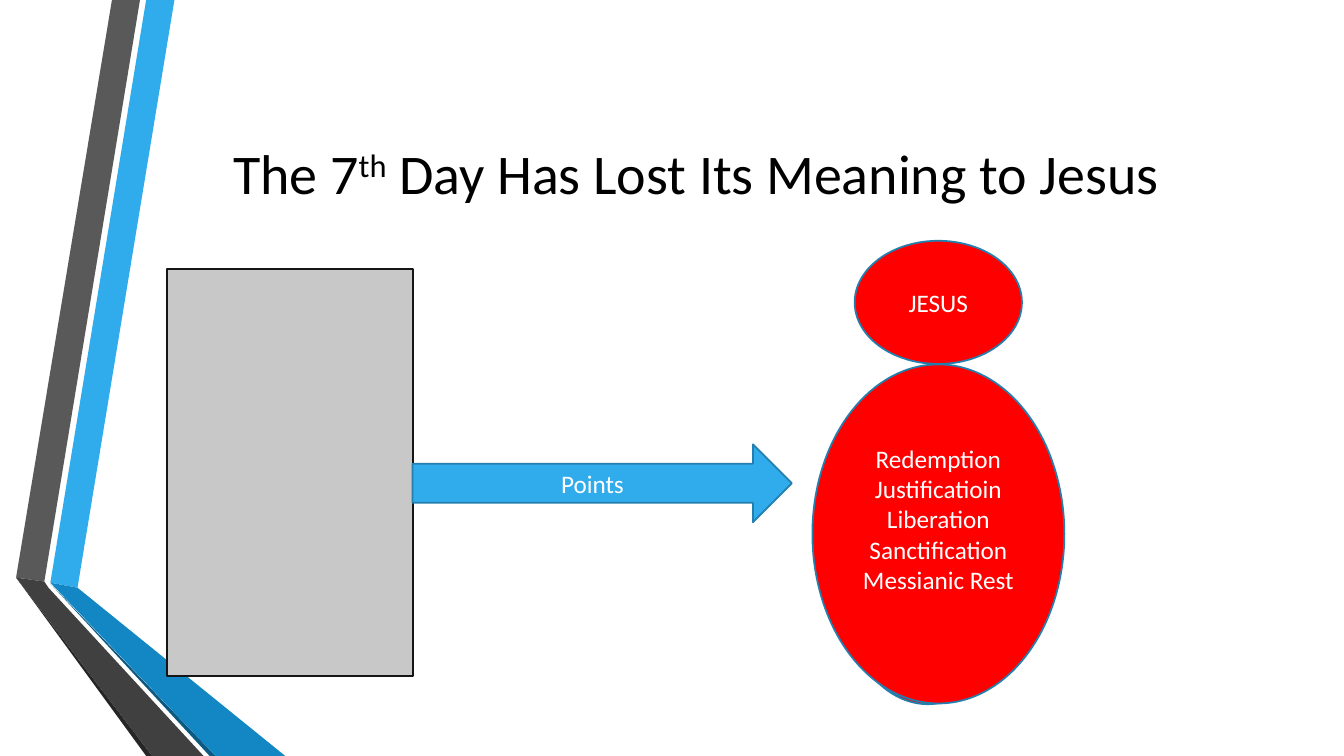
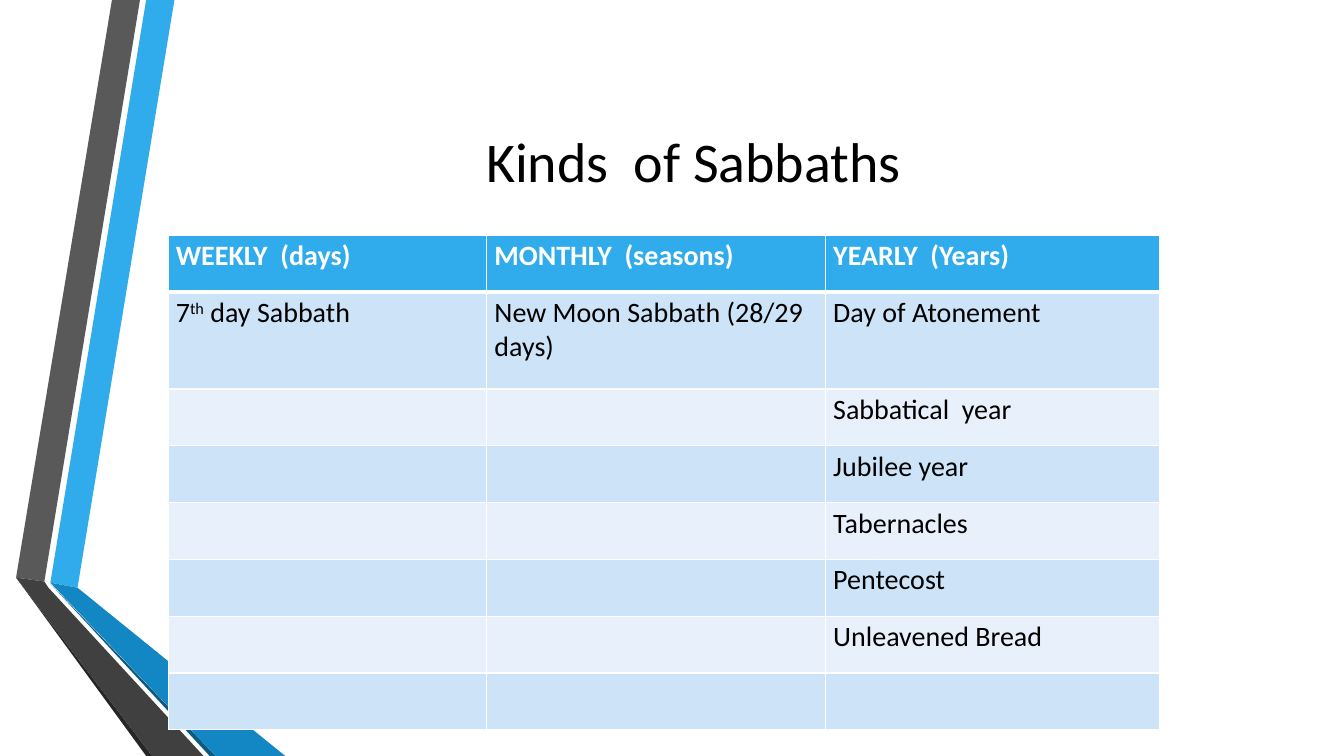
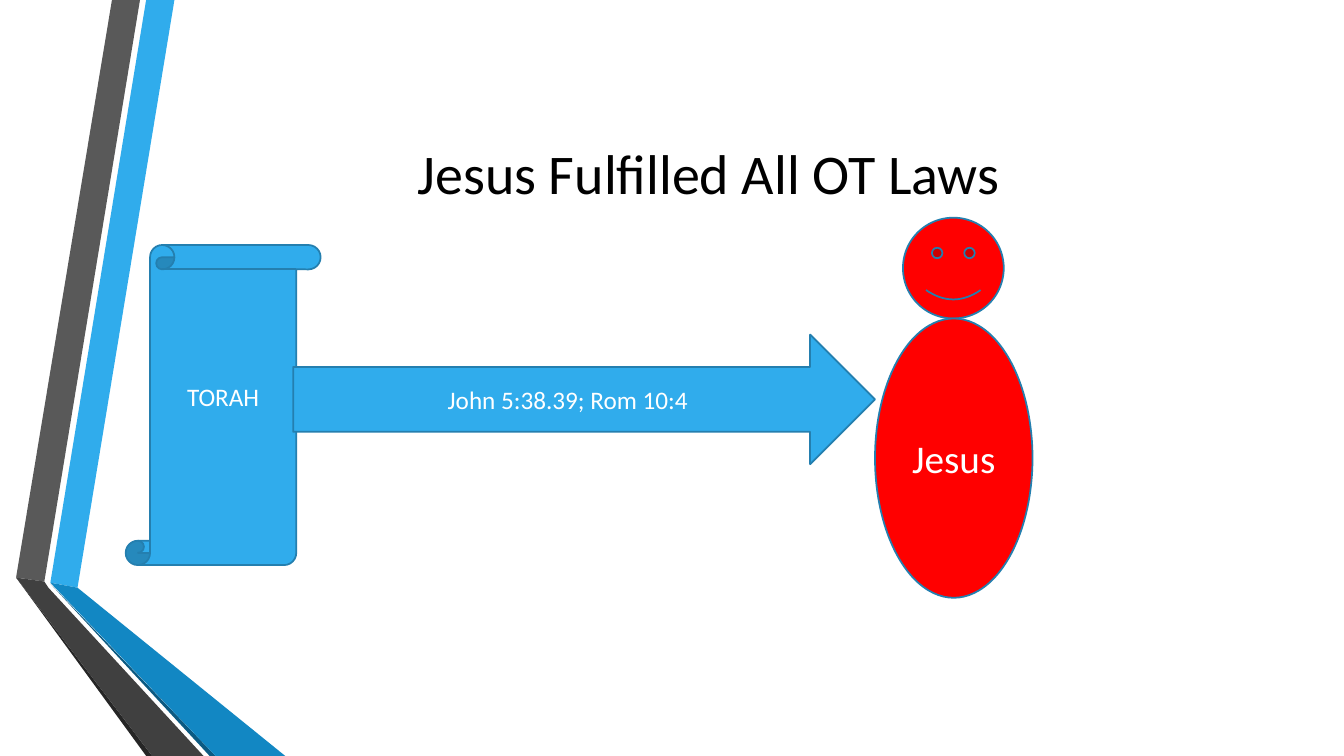
import pptx
import pptx.chart.data
import pptx.dml.color
import pptx.enum.shapes
import pptx.enum.text
import pptx.oxml
import pptx.oxml.ns
import pptx.util

Pt = pptx.util.Pt
Kind = pptx.enum.shapes.MSO_SHAPE
Align = pptx.enum.text.PP_ALIGN
Anchor = pptx.enum.text.MSO_ANCHOR

SKY, EDGE, RED = "30ACEC", "247FAF", "FF0000"
WHITE, BLACK = "FFFFFF", "000000"
BANDS = ["CDE3F8", "E8F1FB"]
LINE = 21.6


def paint(part, hue):
    """Give a fill or a font one solid colour."""
    if hasattr(part, "solid"):
        part.solid()
        part = part.fore_color
    else:
        part = part.color
    part.rgb = pptx.dml.color.RGBColor.from_string(hue)


def write(frame, lines, size, hue, bold=False, align=Align.CENTER, **looks):
    """Fill a text frame; text between bars is raised."""
    for name, value in looks.items():
        setattr(frame, name, value)
    for row, line in enumerate(lines):
        para = frame.add_paragraph() if row else frame.paragraphs[0]
        para.alignment = align
        for spot, text in enumerate(line.split("|")):
            run = para.add_run()
            run.text = text
            for name, value in {"name": "Calibri", "size": Pt(size), "bold": bold}.items():
                setattr(run.font, name, value)
            paint(run.font, hue)
            if spot % 2:
                run._r.get_or_add_rPr().set("baseline", "30000")


deck = pptx.Presentation()
deck.slide_width, deck.slide_height = Pt(960), Pt(540)
base = deck.slide_layouts.get_by_name("Title Only")

# Layout: drop the footers
for holder in list(base.placeholders):
    if holder.placeholder_format.idx >= 10:
        holder.element.getparent().remove(holder.element)

# Slides and titles: text, left, top, width, height, extra right inset
titles = [
    ("The 7|th| Day Has Lost Its Meaning to Jesus", 116.6, 54, 789.1, 138.2, 28),
    ("Kinds  of Sabbaths", 197.3, 36, 607, 156.2, 11),
    ("Jesus Fulfilled All OT Laws", 116.6, 54, 789.1, 138.2, 10),
]
slides = []
for text, left, top, width, height, inset in titles:
    slide = deck.slides.add_slide(base)
    title = slide.shapes.title
    place = {"left": left, "top": top, "width": width, "height": height}
    for name, value in place.items():
        setattr(title, name, Pt(value))
    write(title.text_frame, [text], 40, BLACK, word_wrap=True,
          vertical_anchor=Anchor.MIDDLE, margin_right=Pt(7.2 + inset))
    slides.append(slide)
first, second, third = slides

# Folded ribbons, moved to the layout so that all slides share them
ribbons = [
    (SKY, [(36, 416.2), (55.4, 419.8), (124.6, 0), (104.4, 0)]),
    ("595959", [(100, 0), (80, 0), (11.5, 412.6), (31.7, 415.4)]),
    ("262626", [(11.5, 412.6), (104.4, 540), (108.7, 540)]),
    ("0C5A82", [(36, 416.9), (149.8, 540), (154.1, 540)]),
    ("1287C3", [(36, 416.2), (154.1, 540), (203.8, 540), (55.4, 419.8)]),
    ("404040", [(145.4, 540), (34.6, 419.8), (31.7, 415.4), (11.5, 412.6), (108.7, 540)]),
]
for spot, (hue, points) in enumerate(ribbons):
    points = [(Pt(x), Pt(y)) for x, y in points]
    pen = first.shapes.build_freeform(*points[0])
    pen.add_line_segments(points[1:], close=True)
    ribbon = pen.convert_to_shape()
    ribbon.shadow.inherit = False
    paint(ribbon.fill, hue)
    ribbon.line.fill.background()
    ribbon.element.nvSpPr.cNvPr.set("id", str(20 + spot))
    base.shapes.element.insert(2 + spot, ribbon.element)

# Figures: slide, kind, box, fill, edge, lines, text size, extra bottom inset
virtues = ["Redemption", "Justificatioin", "Liberation", "Sanctification", "Messianic Rest"]
figures = [
    (first, Kind.RECTANGLE, (119.5, 192, 175.7, 291), "C8C8C8", "141516", [], 18, 0),
    (first, Kind.OVAL, (610.5, 172, 119.5, 88), RED, EDGE, ["JESUS"], 18, 0),
    (first, Kind.OVAL, (595.4, 298, 134.6, 205), RED, EDGE, [], 18, 0),
    (first, Kind.OVAL, (580.3, 260.3, 180, 242.2), RED, EDGE, virtues, 18, LINE),
    (first, Kind.RIGHT_ARROW, (294.7, 317.4, 270.9, 55.6), SKY, EDGE, ["Points"], 18, 0),
    (third, Kind.VERTICAL_SCROLL, (89.8, 175, 139.2, 228.6), SKY, EDGE, ["TORAH"], 18, LINE),
    (third, Kind.RIGHT_ARROW, (209.4, 239, 415.6, 92.6), SKY, EDGE,
     ["John 5:38.39; Rom 10:4"], 18, 0),
    (third, Kind.SMILEY_FACE, (645, 155.5, 72, 72), RED, EDGE, [], 18, 0),
    (third, Kind.OVAL, (625, 227.5, 112.5, 199.5), RED, EDGE, ["Jesus"], 28, 0),
]
for slide, kind, box, hue, edge, lines, size, inset in figures:
    shape = slide.shapes.add_shape(kind, *map(Pt, box))
    shape.shadow.inherit = False
    paint(shape.fill, hue)
    paint(shape.line.fill, edge)
    shape.line.width = Pt(1.25)
    write(shape.text_frame, lines, size, WHITE, word_wrap=True,
          vertical_anchor=Anchor.MIDDLE, margin_bottom=Pt(3.6 + inset))

# Table of Sabbaths
rows = [
    ["WEEKLY  (days)", "MONTHLY  (seasons)", "YEARLY  (Years)"],
    ["7|th| day Sabbath", "New Moon Sabbath (28/29 days)", "Day of Atonement"],
    ["", "", "Sabbatical  year"],
    ["", "", "Jubilee year"],
    ["", "", "Tabernacles"],
    ["", "", "Pentecost"],
    ["", "", "Unleavened Bread"],
    ["", "", ""],
]
widths = [227.6, 242, 238.2]
heights = [40.6, 69.2] + [40.6] * 6
table = second.shapes.add_table(len(rows), len(widths), Pt(120.2), Pt(168),
                                Pt(sum(widths)), Pt(sum(heights))).table
for col, width in zip(table.columns, widths):
    col.width = Pt(width)
for row, height in zip(table.rows, heights):
    row.height = Pt(height)

pads = {"margin_left": 5.4, "margin_right": 5.4, "margin_top": 2.7, "margin_bottom": 2.7}
for down, row in enumerate(rows):
    head = down == 0
    for over, text in enumerate(row):
        cell = table.cell(down, over)
        for name, value in pads.items():
            setattr(cell, name, Pt(value))
        # White cell borders, heavier under the header
        props = cell._tc.get_or_add_tcPr()
        for side in "LRTB":
            heavy = (head and side == "B") or (down == 1 and side == "T")
            props.append(pptx.oxml.parse_xml(
                f'<a:ln{side} {pptx.oxml.ns.nsdecls("a")} w="{Pt(3 if heavy else 1)}">'
                f'<a:solidFill><a:srgbClr val="{WHITE}"/></a:solidFill></a:ln{side}>'))
        paint(cell.fill, SKY if head else BANDS[(down - 1) % 2])
        if text:
            write(cell.text_frame, [text], 20, WHITE if head else BLACK, head, Align.LEFT)

deck.save("out.pptx")
